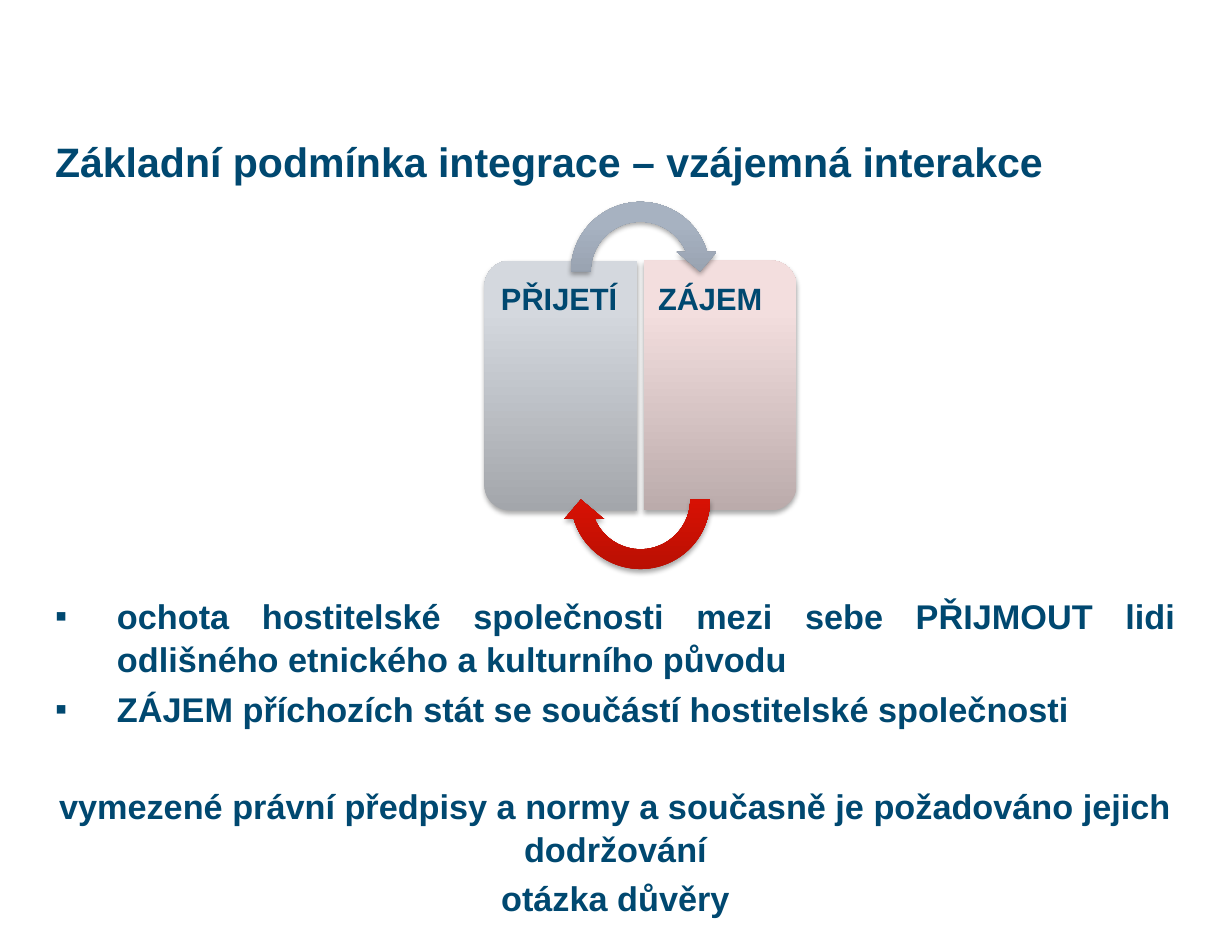
from pptx import Presentation, oxml, util as u
from pptx.dml import color as c
from pptx.enum import shapes, text
from pptx.oxml import ns

SCALE = 7422
COLORS = {
    "ink": "004870",
    "shadow": "000000",
    "acceptance": ("A3A6AB", "D4D8DE", "D5D9DF"),
    "interest": ("BBABAB", "F3DEDE", "F4DFDE"),
    "forward": ("808995", "A7B2C1", "A7B3C2"),
    "back": ("B60F03", "EC1304", "F11000"),
}
STOPS = (0, 80000, 100000)
ARROW = (0.125, 11.423, 204.577, 108, 0.125)
PANEL = (0.167, 0)
LEFT, CENTER, JUSTIFY = text.PP_ALIGN.LEFT, text.PP_ALIGN.CENTER, text.PP_ALIGN.JUSTIFY


def px(value):
    return u.Emu(value * SCALE)


def assign(target, values):
    for name, value in values.items():
        setattr(target, name, value)


class Builder:
    def __init__(self, page):
        self.page = page

    def place(self, box, left, top, width, height):
        assign(box, dict(left=px(left), top=px(top), width=px(width), height=px(height)))

    def frame(self, box, margins, anchor):
        sides = ("margin_left", "margin_top", "margin_right", "margin_bottom")
        assign(box.text_frame, dict(zip(sides, map(px, margins))))
        assign(box.text_frame, dict(word_wrap=True, auto_size=text.MSO_AUTO_SIZE.NONE,
                                    vertical_anchor=anchor))

    def wording(self, para, words, size, **layout):
        span = para.add_run()
        span.text = words
        assign(span.font, dict(name="Arial", size=u.Pt(size), bold=True))
        span.font.color.rgb = c.RGBColor.from_string(COLORS["ink"])
        assign(para, layout)

    def title(self, words, area):
        box = self.page.shapes.title
        self.place(box, *area)
        self.frame(box, (12, 6, 12, 6), text.MSO_ANCHOR.BOTTOM)
        self.wording(box.text_frame.paragraphs[0], words, 24, alignment=LEFT)

    def body(self, items, area):
        box = self.page.placeholders[1]
        self.place(box, *area)
        self.frame(box, (12, 6, 12, 6), text.MSO_ANCHOR.TOP)
        for index, (words, bulleted, before) in enumerate(items):
            para = box.text_frame.paragraphs[0] if index == 0 else box.text_frame.add_paragraph()
            self.bullet(para, bulleted)
            self.wording(para, words, 20, alignment=JUSTIFY if bulleted else CENTER,
                         space_before=u.Pt(before), line_spacing=1.04)

    def bullet(self, para, bulleted):
        indent = px(62) if bulleted else 0
        props = para._p.get_or_add_pPr()
        props.set("marL", str(indent))
        props.set("indent", str(-indent))
        mark = '<a:buChar %s char="▪"/>' if bulleted else "<a:buNone %s/>"
        props.append(oxml.parse_xml(mark % ns.nsdecls("a")))

    def label(self, words, area, margins):
        box = self.page.shapes.add_textbox(*map(px, area))
        self.frame(box, margins, text.MSO_ANCHOR.TOP)
        self.wording(box.text_frame.paragraphs[0], words, 18, alignment=LEFT, line_spacing=0.9)

    def shape(self, kind, area, rotation, adjustments, colors):
        box = self.page.shapes.add_shape(kind, *map(px, area))
        box.rotation = rotation
        for index, value in enumerate(adjustments):
            box.adjustments[index] = value
        self.gradient(box, COLORS[colors])
        box.line.fill.background()
        self.shadow(box)

    def gradient(self, box, colors):
        stops = "".join(
            f'<a:gs pos="{pos}"><a:srgbClr val="{color}"/></a:gs>'
            for pos, color in zip(STOPS, colors))
        fill = oxml.parse_xml(
            f'<a:gradFill {ns.nsdecls("a")} rotWithShape="0"><a:gsLst>{stops}</a:gsLst>'
            '<a:lin ang="16200000" scaled="0"/></a:gradFill>')
        box._element.spPr.find(ns.qn("a:prstGeom")).addnext(fill)

    def shadow(self, box):
        box.shadow.inherit = False
        box._element.spPr.find(ns.qn("a:effectLst")).append(oxml.parse_xml(
            f'<a:outerShdw {ns.nsdecls("a")} blurRad="39370" dist="22860" dir="5400000" '
            f'rotWithShape="0"><a:srgbClr val="{COLORS["shadow"]}">'
            '<a:alpha val="35000"/></a:srgbClr></a:outerShdw>'))


def main():
    deck = Presentation()
    assign(deck, dict(slide_width=px(1232), slide_height=px(946)))
    builder = Builder(deck.slides.add_slide(deck.slide_layouts[1]))
    builder.title("Základní podmínka integrace – vzájemná interakce", (43, 132, 1145, 60))
    builder.body((
        ("ochota hostitelské společnosti mezi sebe PŘIJMOUT lidi odlišného etnického "
         "a kulturního původu", True, 0),
        ("ZÁJEM příchozích stát se součástí hostitelské společnosti", True, 4),
        ("vymezené právní předpisy a normy a současně je požadováno jejich dodržování",
         False, 32),
        ("otázka důvěry", False, 4),
    ), (43, 588, 1145, 341))
    kinds = shapes.MSO_SHAPE
    for words, left, rotation, colors, label_left, margins in (
        ("PŘIJETÍ", 436, 270, "acceptance", 492, (9, 15, 14, 15)),
        ("ZÁJEM", 595, 90, "interest", 644, (14, 15, 9, 15)),
    ):
        builder.shape(kinds.ROUND_2_SAME_RECTANGLE, (left, 309, 250, 153), rotation, PANEL, colors)
        builder.label(words, (label_left, 269, 145, 234), margins)
    for top, rotation, colors in ((192, 0, "forward"), (420, 180, "back")):
        builder.shape(kinds.CIRCULAR_ARROW, (561, top, 159, 159), rotation, ARROW, colors)
    deck.save("out.pptx")


if __name__ == "__main__":
    main()
